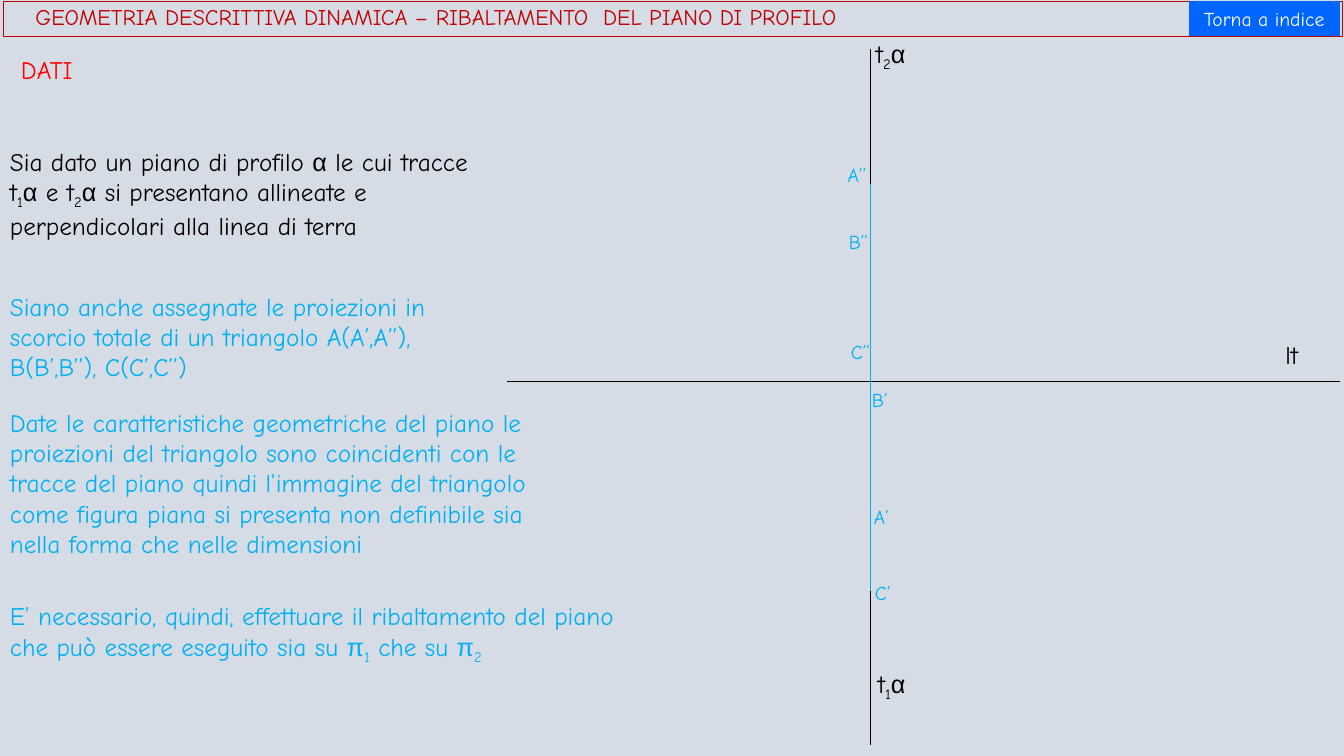
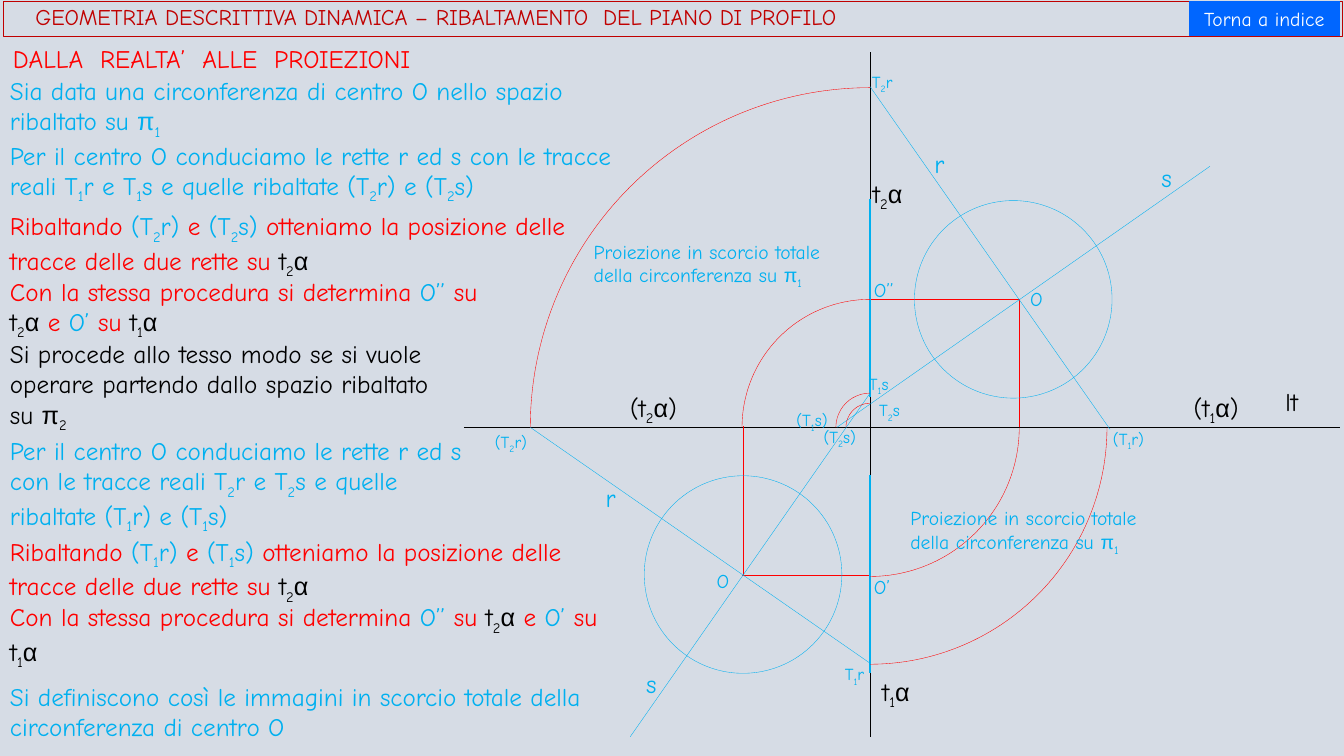
"""Builds two descriptive-geometry slides on the rotation of the profile plane."""
import itertools

import pptx
import pptx.dml.color
import pptx.enum.shapes
import pptx.enum.text
import pptx.oxml.ns
import pptx.util
from lxml import etree

Inches = pptx.util.Inches
SHAPE = pptx.enum.shapes.MSO_SHAPE
ALIGN = pptx.enum.text.PP_ALIGN
BLACK, RED, CYAN = "000000", "FF0000", "00B0F0"
DARK_RED, BLUE, WHITE, PAPER = "C00000", "0066FF", "FFFFFF", "D6DCE5"
SUBSCRIPTS = {"₁": "1", "₂": "2"}
AXIS_X, GROUND_Y = 8.63, 4.24


def rgb(value):
    return pptx.dml.color.RGBColor.from_string(value)


def write(tf, text, size=18, color=BLACK, align=ALIGN.LEFT):
    tf.word_wrap = True
    p = tf.paragraphs[0]
    p.alignment = align
    parts = [(text, color)] if isinstance(text, str) else text
    for part, part_color in parts:
        for kind, chars in itertools.groupby(part, lambda c: (c in SUBSCRIPTS, c in "απ")):
            subscript, greek = kind
            r = p.add_run()
            r.text = "".join(SUBSCRIPTS.get(c, c) for c in chars)
            r.font.name = "Arial" if greek else "Comic Neue"
            r.font.size = pptx.util.Pt(size)
            r.font.bold = False
            r.font.color.rgb = rgb(part_color)
            if subscript:
                r.font._element.set("baseline", "-25000")


data_texts = [
    (8.61, 6.58, 0.56, 1, 18, BLACK, "t₁α"),
    (12.65, 3.32, 0.56, 1, 18, BLACK, "lt"),
    (8.59, 0.33, 0.86, 1, 18, BLACK, "t₂α"),
    (8.57, 4.96, 0.53, 1, 14, CYAN, "A’"),
    (8.31, 1.57, 0.53, 1, 14, CYAN, "A’’"),
    (8.34, 3.32, 0.53, 1, 14, CYAN, "C’’"),
    (8.32, 2.23, 0.4, 1, 14, CYAN, "B’’"),
    (8.58, 5.71, 0.53, 1, 14, CYAN, "C’"),
    (8.55, 3.8, 0.4, 1, 14, CYAN, "B’"),
    (0.11, 0.49, 1.12, 1, 18, RED, "DATI"),
    (0, 1.4, 4.82, 3, 18, BLACK,
     "Sia dato un piano di profilo α le cui tracce t₁α e t₂α si presentano "
     "allineate e perpendicolari alla linea di terra"),
    (0, 2.84, 4.5, 3, 18, CYAN,
     "Siano anche assegnate le proiezioni in scorcio totale di un triangolo "
     "A(A’,A’’), B(B’,B’’), C(C’,C’’)"),
    (0, 3.99, 5.64, 5, 18, CYAN,
     "Date le caratteristiche geometriche del piano le proiezioni del triangolo "
     "sono coincidenti con le tracce del piano quindi l’immagine del triangolo "
     "come figura piana si presenta non definibile sia nella forma che nelle "
     "dimensioni"),
    (0, 5.91, 6.42, 2, 18, CYAN,
     "E’ necessario, quindi, effettuare il ribaltamento del piano che può essere "
     "eseguito sia su π₁ che su π₂"),
]
data_lines = [
    (5.03, 3.78, 13.29, 3.78, BLACK, 0.25),
    (AXIS_X, 0.49, AXIS_X, 7.39, BLACK, 0.25),
    (AXIS_X, 1.83, AXIS_X, 5.86, CYAN, 0.25),
]

projection_texts = [
    (8.65, 6.66, 0.56, 1, 18, BLACK, "t₁α"),
    (12.65, 3.78, 0.56, 1, 18, BLACK, "lt"),
    (8.56, 1.72, 0.86, 1, 18, BLACK, "t₂α"),
    (11.74, 3.84, 0.75, 1, 18, BLACK, "(t₁α)"),
    (6.15, 3.84, 0.79, 1, 18, BLACK, "(t₂α)"),
    (10.12, 2.8, 0.53, 1, 14, CYAN, "O"),
    (7.01, 5.59, 0.53, 1, 14, CYAN, "O"),
    (8.57, 5.65, 0.53, 1, 14, CYAN, "O’"),
    (8.57, 2.71, 0.53, 1, 14, CYAN, "O’’"),
    (10.94, 4.2, 0.79, 1, 12, CYAN, "(T₁r)"),
    (4.81, 4.23, 0.79, 1, 12, CYAN, "(T₂r)"),
    (7.8, 4.02, 0.79, 1, 12, CYAN, "(T₁s)"),
    (8.07, 4.18, 0.79, 1, 12, CYAN, "(T₂s)"),
    (8.28, 6.54, 0.79, 1, 12, CYAN, "T₁r"),
    (8.55, 0.66, 0.63, 1, 12, CYAN, "T₂r"),
    (8.52, 3.66, 0.79, 1, 12, CYAN, "T₁s"),
    (8.62, 3.92, 0.79, 1, 12, CYAN, "T₂s"),
    (9.17, 1.42, 0.46, 1, 18, CYAN, "r"),
    (5.91, 4.74, 0.46, 1, 18, CYAN, "r"),
    (11.42, 1.56, 0.46, 1, 18, CYAN, "s"),
    (6.31, 6.58, 0.46, 1, 18, CYAN, "s"),
    (0.03, 0.38, 6.05, 1, 18, RED, "DALLA  REALTA’  ALLE  PROIEZIONI"),
    (0, 0.7, 6.15, 2, 18, CYAN,
     "Sia data una circonferenza di centro O nello spazio ribaltato su π₁"),
    (0, 3.31, 4.54, 3, 18, BLACK,
     "Si procede allo tesso modo se si vuole operare partendo dallo spazio "
     "ribaltato su π₂"),
    (0, 6.71, 5.87, 2, 18, CYAN,
     "Si definiscono così le immagini in scorcio totale della circonferenza di "
     "centro O"),
]
for left, top, width in [(8.93, 4.97, 2.71), (5.79, 2.33, 2.66)]:
    projection_texts.append((left, top, width, 2, 14, CYAN,
                             "Proiezione in scorcio totale della circonferenza su π₁"))
for real, turned, lines_top, lines_width, lines_rows, turn_top, centre_top, centre_width in [
    ("₁", "₂", 1.34, 6.32, 2, 2.04, 2.69, 5.06),
    ("₂", "₁", 4.27, 4.75, 3, 5.27, 5.92, 6.08),
]:
    projection_texts += [
        (0, lines_top, lines_width, lines_rows, 18, CYAN,
         f"Per il centro O conduciamo le rette r ed s con le tracce reali T{real}r "
         f"e T{real}s e quelle ribaltate (T{turned}r) e (T{turned}s)"),
        (0, turn_top, 5.74, 2, 18, RED,
         [("Ribaltando ", RED), (f"(T{turned}r) ", CYAN), ("e ", RED),
          (f"(T{turned}s) ", CYAN),
          ("otteniamo la posizione delle tracce delle due rette su ", RED),
          ("t₂α", BLACK)]),
        (0, centre_top, centre_width, 2, 18, RED,
         [("Con la stessa procedura si determina ", RED), ("O’’ ", CYAN),
          ("su ", RED), ("t₂α", BLACK), (" e ", RED), ("O’", CYAN),
          (" su ", RED), ("t₁α", BLACK)]),
    ]
projection_lines = [
    (4.6, GROUND_Y, 13.29, GROUND_Y, BLACK, 0.25),
    (AXIS_X, 0.52, AXIS_X, 7.31, BLACK, 0.25),
    (10.11, 2.97, 10.11, GROUND_Y, RED, 0.25),
    (10.12, 2.97, AXIS_X, 2.97, RED, 0.25),
    (7.37, 4.23, 7.37, 5.71, RED, 0.25),
    (AXIS_X, 5.71, 7.36, 5.71, RED, 0.25),
    (11.01, 4.26, AXIS_X, 0.86, CYAN, 0.25),
    (12, 1.65, 8.3, GROUND_Y, CYAN, 0.25),
    (5.26, GROUND_Y, AXIS_X, 6.58, CYAN, 0.25),
    (AXIS_X, 3.9, 6.25, 7.31, CYAN, 0.25),
    (AXIS_X, 1.97, AXIS_X, 3.94, CYAN, 1.5),
    (AXIS_X, 4.71, AXIS_X, 6.68, CYAN, 1.5),
]
upper_left, lower_right = (108, 162), (216, 54)
projection_curves = [
    (SHAPE.OVAL, 10.05, 2.97, 0.98, CYAN, ()),
    (SHAPE.OVAL, 7.37, 5.7, 0.98, CYAN, ()),
]
for radius, quarter in [(3.37, upper_left), (1.27, upper_left), (0.34, upper_left),
                        (0.24, upper_left), (2.35, lower_right), (1.48, lower_right)]:
    projection_curves.append((SHAPE.ARC, AXIS_X, GROUND_Y, radius, RED, quarter))

prs = pptx.Presentation()
prs.slide_width, prs.slide_height = Inches(13.33), Inches(7.5)
background = prs.slide_master.background.fill
background.solid()
background.fore_color.rgb = rgb(PAPER)

for texts, lines, curves in [
    (data_texts, data_lines, []),
    (projection_texts, projection_lines, projection_curves),
]:
    s = prs.slides.add_slide(prs.slide_layouts[5])
    title = s.shapes.title
    title.left, title.top = Inches(0.03), Inches(0.01)
    title.width, title.height = Inches(13.28), Inches(0.35)
    title.line.color.rgb = rgb(DARK_RED)
    title.line.width = pptx.util.Pt(0.25)
    tf = title.text_frame
    tf.auto_size = pptx.enum.text.MSO_AUTO_SIZE.NONE
    tf.vertical_anchor = pptx.enum.text.MSO_ANCHOR.MIDDLE
    tf.margin_left = Inches(0.32)
    write(tf, "GEOMETRIA DESCRITTIVA DINAMICA – RIBALTAMENTO  DEL PIANO DI PROFILO",
          size=16, color=DARK_RED)
    tf.paragraphs[0].line_spacing = 0.9

    button = s.shapes.add_shape(SHAPE.ACTION_BUTTON_CUSTOM, Inches(11.79), Inches(0.01),
                                Inches(1.5), Inches(0.35))
    button.shadow.inherit = False
    button.fill.solid()
    button.fill.fore_color.rgb = rgb(BLUE)
    button.line.fill.background()
    button.text_frame.vertical_anchor = pptx.enum.text.MSO_ANCHOR.MIDDLE
    write(button.text_frame, "Torna a indice", size=14, color=WHITE, align=ALIGN.CENTER)

    for x1, y1, x2, y2, color, width in lines:
        line = s.shapes.add_connector(pptx.enum.shapes.MSO_CONNECTOR.STRAIGHT,
                                      Inches(x1), Inches(y1), Inches(x2), Inches(y2))
        line.line.color.rgb = rgb(color)
        line.line.width = pptx.util.Pt(width)
        etree.SubElement(line._element.spPr, pptx.oxml.ns.qn("a:effectLst"))

    for kind, x, y, radius, color, angles in curves:
        curve = s.shapes.add_shape(kind, Inches(x - radius), Inches(y - radius),
                                   Inches(2 * radius), Inches(2 * radius))
        curve.shadow.inherit = False
        curve.fill.background()
        curve.line.color.rgb = rgb(color)
        curve.line.width = pptx.util.Pt(0.25)
        for i, angle in enumerate(angles):
            curve.adjustments[i] = angle

    for left, top, width, rows, size, color, text in texts:
        height = 0.1 + rows * size * 1.2 / 72
        box = s.shapes.add_textbox(Inches(left), Inches(top), Inches(width), Inches(height))
        box.text_frame.auto_size = pptx.enum.text.MSO_AUTO_SIZE.SHAPE_TO_FIT_TEXT
        write(box.text_frame, text, size=size, color=color)

prs.save("out.pptx")
